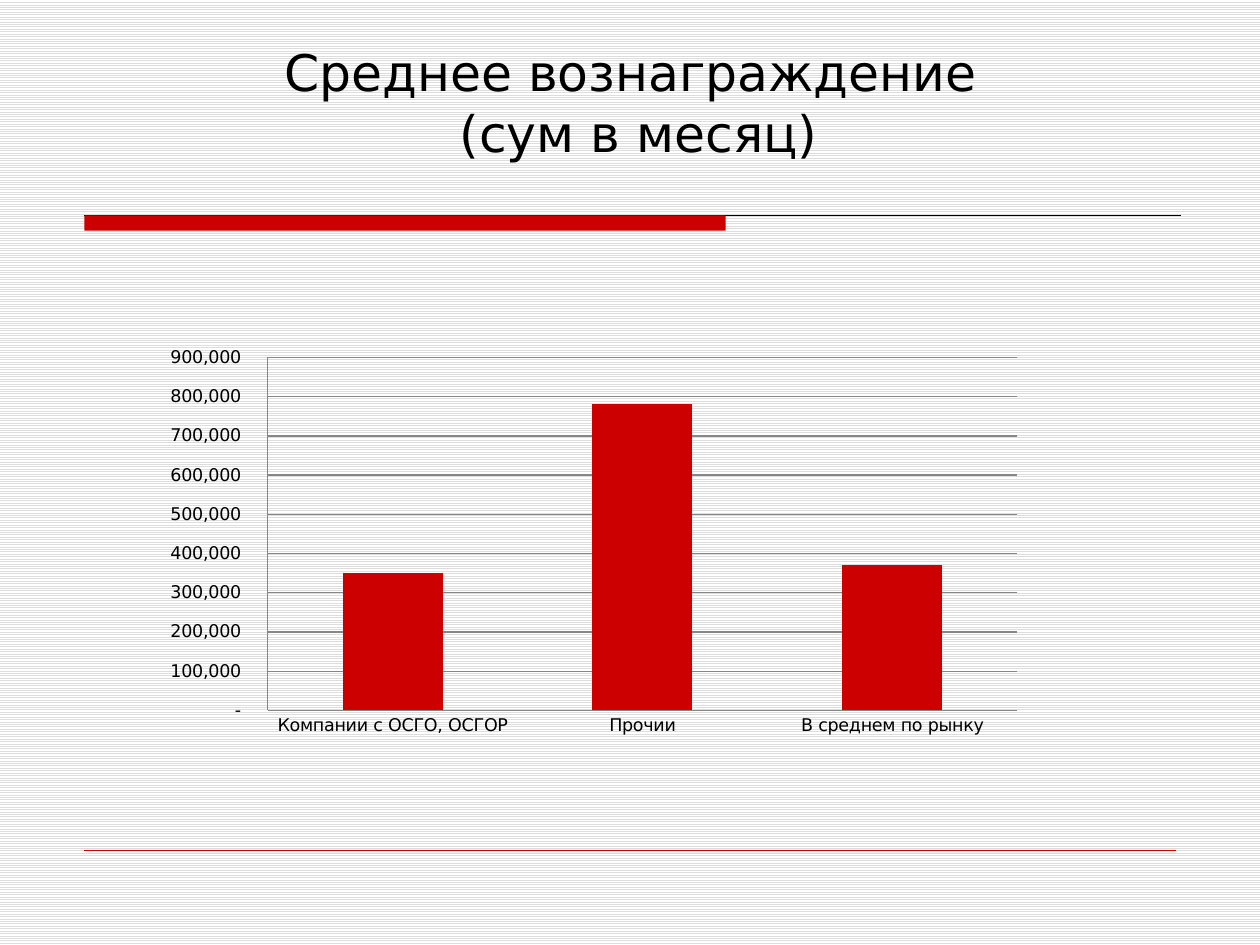
from lxml import etree
from pptx import Presentation
from pptx.chart.data import CategoryChartData
from pptx.dml.color import RGBColor
from pptx.enum.chart import XL_CHART_TYPE, XL_TICK_MARK
from pptx.enum.dml import MSO_PATTERN
from pptx.enum.shapes import MSO_CONNECTOR, MSO_SHAPE
from pptx.enum.text import MSO_ANCHOR, PP_ALIGN
from pptx.oxml import parse_xml
from pptx.oxml.ns import qn
from pptx.util import Inches, Pt

COLUMNS = XL_CHART_TYPE.COLUMN_CLUSTERED
NO_TICKS = XL_TICK_MARK.NONE
STRIPES = MSO_PATTERN.LIGHT_HORIZONTAL
STRAIGHT = MSO_CONNECTOR.STRAIGHT
RECTANGLE = MSO_SHAPE.RECTANGLE
BOTTOM = MSO_ANCHOR.BOTTOM
CENTER = PP_ALIGN.CENTER

FONT = "DejaVu Sans"
COLORS = {
    "red": "CC0000",
    "black": "000000",
    "grid": "868686",
    "stripe": "DDDDDD",
    "white": "FFFFFF",
}


def color(name):
    return RGBColor.from_string(COLORS[name])


deck = Presentation()
deck.slide_width = Inches(10)
deck.slide_height = Inches(7.5)
page = deck.slides.add_slide(deck.slide_layouts[6])

backdrop = page.background.fill
backdrop.patterned()
backdrop.pattern = STRIPES
backdrop.fore_color.rgb = color("stripe")
backdrop.back_color.rgb = color("white")

for left, right, top, name, width in [
    (0.67, 9.37, 1.71, "black", 0.75),
    (0.67, 9.33, 6.75, "red", 0.25),
]:
    rule = page.shapes.add_connector(
        STRAIGHT, Inches(left), Inches(top), Inches(right), Inches(top))
    rule.line.color.rgb = color(name)
    rule.line.width = Pt(width)
    etree.SubElement(rule.element.spPr, qn("a:effectLst"))

bar = page.shapes.add_shape(
    RECTANGLE, Inches(0.67), Inches(1.71), Inches(5.09), Inches(0.12))
bar.shadow.inherit = False
bar.fill.solid()
bar.fill.fore_color.rgb = color("red")
bar.line.fill.background()

title = page.shapes.add_textbox(
    Inches(0.63), Inches(0.23), Inches(8.75), Inches(1.56))
frame = title.text_frame
frame.word_wrap = True
frame.vertical_anchor = BOTTOM
frame.margin_bottom = Inches(0.5)
for index, text in enumerate(["Среднее вознаграждение", " (сум в месяц)"]):
    para = frame.paragraphs[0] if index == 0 else frame.add_paragraph()
    para.alignment = CENTER
    span = para.add_run()
    span.text = text
    span.font.name = FONT
    span.font.size = Pt(28.8)
    span.font.color.rgb = color("black")

data = CategoryChartData()
data.categories = ["Компании с ОСГО, ОСГОР", "Прочии", "В среднем по рынку"]
data.add_series("Series 1", [350000, 780000, 370000])
chart = page.shapes.add_chart(
    COLUMNS, Inches(0.55), Inches(1.95), Inches(8.75), Inches(4.67), data).chart
chart.has_title = False
chart.has_legend = False
chart.font.name = FONT
chart.font.size = Pt(10)
chart.font.color.rgb = color("black")

plot = chart.plots[0]
plot.gap_width = 150
plot.vary_by_categories = False
fill = plot.series[0].format.fill
fill.solid()
fill.fore_color.rgb = color("red")

values = chart.value_axis
values.minimum_scale = 0
values.maximum_scale = 900000
values.major_unit = 100000
values.has_major_gridlines = True
values.tick_labels.number_format = (
    '_-* #,##0_р_._-;\\-* #,##0_р_._-;_-* "-"_р_._-')
values.tick_labels.number_format_is_linked = False
for axis in (values, chart.category_axis):
    axis.major_tick_mark = NO_TICKS
    axis.minor_tick_mark = NO_TICKS
for part in (values, chart.category_axis, values.major_gridlines):
    part.format.line.color.rgb = color("grid")
    part.format.line.width = Pt(0.75)

area = chart.element.chart.plotArea
for old in area.findall(qn("c:layout")):
    area.remove(old)
area.insert(0, parse_xml(
    '<c:layout xmlns:c="http://schemas.openxmlformats.org/drawingml/2006/chart">'
    '<c:manualLayout><c:layoutTarget val="inner"/>'
    '<c:xMode val="edge"/><c:yMode val="edge"/>'
    '<c:x val="0.18"/><c:y val="0.19"/><c:w val="0.68"/><c:h val="0.6"/>'
    '</c:manualLayout></c:layout>'))

deck.save("out.pptx")
